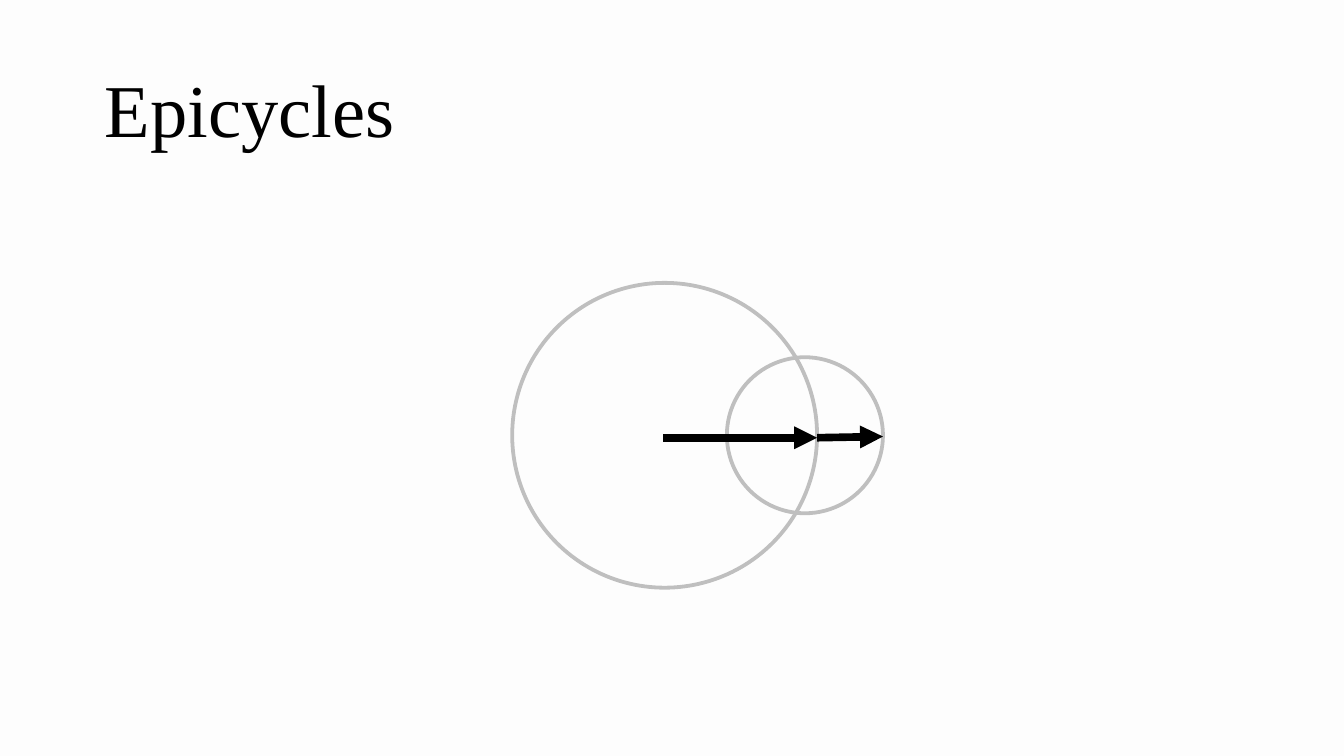
from dataclasses import dataclass

from lxml import etree
from pptx import Presentation
from pptx.dml.color import RGBColor
from pptx.enum.shapes import MSO_CONNECTOR, MSO_SHAPE
from pptx.enum.text import MSO_ANCHOR
from pptx.oxml.ns import qn
from pptx.util import Inches, Pt

ELLIPSE = MSO_SHAPE.OVAL
STRAIGHT = MSO_CONNECTOR.STRAIGHT
MIDDLE = MSO_ANCHOR.MIDDLE
BLANK_LAYOUT = 6


@dataclass(frozen=True)
class Theme:
    background: RGBColor = RGBColor(0xFD, 0xFD, 0xFD)
    ink: RGBColor = RGBColor(0, 0, 0)
    orbit: RGBColor = RGBColor(0xBF, 0xBF, 0xBF)
    font: str = "Times New Roman"
    title_size: Pt = Pt(44)
    orbit_width: Pt = Pt(2.25)
    arrow_width: Pt = Pt(4.5)


class SlideBuilder:
    def __init__(self, page, theme):
        self.page = page
        self.theme = theme
        fill = page.background.fill
        fill.solid()
        fill.fore_color.rgb = theme.background

    def title(self, text, left, top, width, height):
        box = self.page.shapes.add_textbox(
            Inches(left), Inches(top), Inches(width), Inches(height))
        frame = box.text_frame
        frame.word_wrap = True
        frame.vertical_anchor = MIDDLE
        para = frame.paragraphs[0]
        para.text = text
        para.line_spacing = 0.9
        para.font.name = self.theme.font
        para.font.size = self.theme.title_size
        para.font.color.rgb = self.theme.ink

    def circle(self, left, top, diameter):
        ring = self.page.shapes.add_shape(
            ELLIPSE, Inches(left), Inches(top), Inches(diameter), Inches(diameter))
        ring.shadow.inherit = False
        ring.fill.background()
        ring.line.color.rgb = self.theme.orbit
        ring.line.width = self.theme.orbit_width

    def arrow(self, start, end):
        """Draw a line from start to end, (x, y) in inches, with its head at end."""
        arrow = self.page.shapes.add_connector(
            STRAIGHT, *(Inches(value) for value in (*start, *end)))
        arrow.line.color.rgb = self.theme.ink
        arrow.line.width = self.theme.arrow_width
        properties = arrow.element.spPr
        etree.SubElement(properties.find(qn("a:ln")), qn("a:tailEnd"), type="triangle")
        etree.SubElement(properties, qn("a:effectLst"))


def main():
    deck = Presentation()
    deck.slide_width = Inches(11.02)
    deck.slide_height = Inches(6.2)
    page = deck.slides.add_slide(deck.slide_layouts[BLANK_LAYOUT])
    builder = SlideBuilder(page, Theme())

    builder.title("Epicycles", 0.76, 0.33, 9.51, 1.2)

    builder.circle(4.2, 2.32, 2.5)
    builder.circle(5.96, 2.93, 1.28)

    center, joint, tip = (5.44, 3.59), (6.7, 3.59), (7.24, 3.58)
    builder.arrow(center, joint)
    builder.arrow(joint, tip)

    deck.save("out.pptx")


if __name__ == "__main__":
    main()
